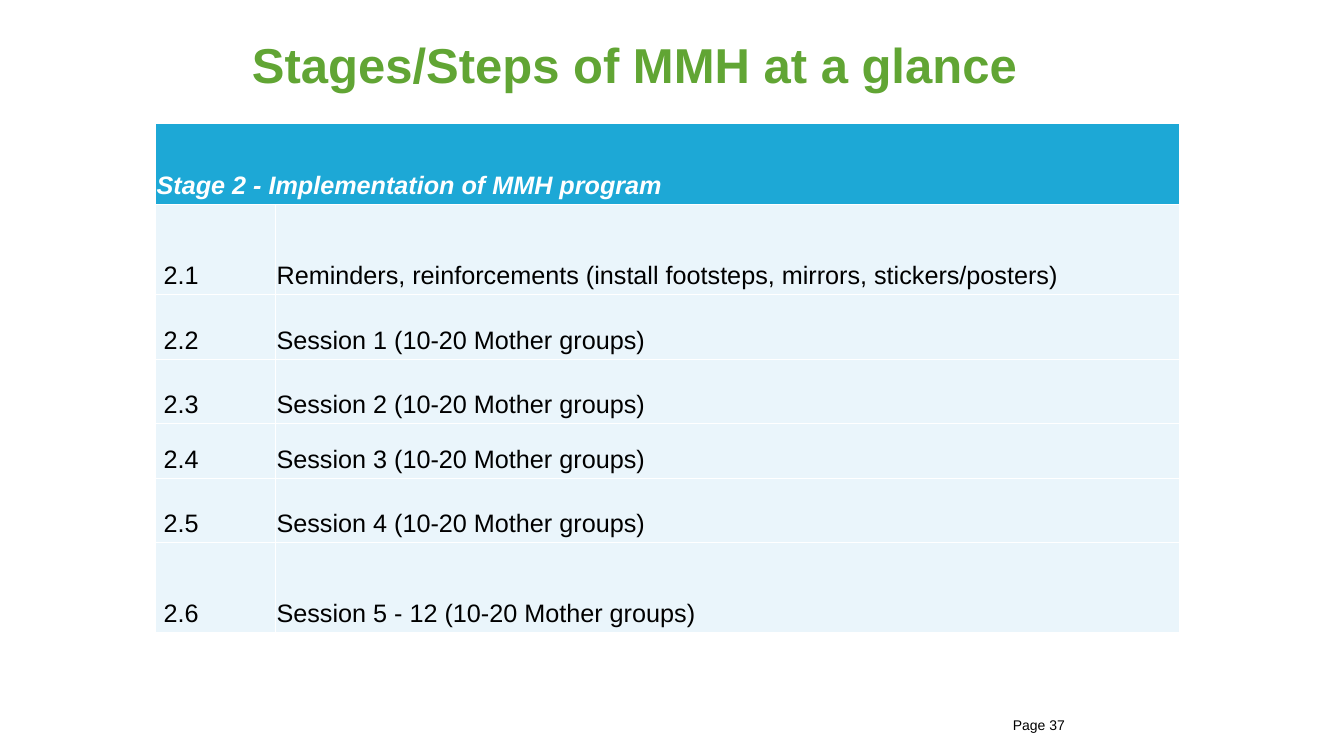
"""Build the slide that lists the steps of stage 2 of the MMH program."""
from lxml.etree import SubElement
from pptx import Presentation
from pptx.dml.color import RGBColor
from pptx.enum.text import MSO_ANCHOR, MSO_AUTO_SIZE, PP_ALIGN
from pptx.oxml.ns import qn
from pptx.util import Pt

COLORS = {"title": "61A534", "head": "1DA8D6", "row": "EAF5FB",
          "line": "FFFFFF", "light": "FFFFFF", "dark": "000000"}
STEPS = ["Reminders, reinforcements (install footsteps, mirrors, stickers/posters)"]
STEPS += [f"Session {name} (10-20 Mother groups)"
          for name in ("1", "2", "3", "4", "5 - 12")]
WIDTHS = [85.7, 645.8]
HEIGHTS = [58, 64.3, 46.5, 45.7, 39.3, 45.7, 64.3]


def style(frame, size, color, bold=False, slant=False):
    """Format the first paragraph of a text frame."""
    para = frame.paragraphs[0]
    para.alignment = PP_ALIGN.LEFT
    for run in para.runs:
        font = run.font
        font.name, font.size = "Arial", Pt(size)
        font.bold, font.italic = bold, slant
        font.color.rgb = RGBColor.from_string(COLORS[color])


def dress(cell, fill, left):
    """Set the margins, borders and fill of a table cell."""
    cell.vertical_anchor = MSO_ANCHOR.BOTTOM
    cell.margin_left, cell.margin_right = Pt(left), Pt(0.7)
    cell.margin_top, cell.margin_bottom = Pt(0.7), Pt(3.6)
    props = cell._tc.get_or_add_tcPr()
    for side in ("lnL", "lnR", "lnT", "lnB"):
        line = SubElement(props, qn(f"a:{side}"), w=str(Pt(1)))
        solid = SubElement(line, qn("a:solidFill"))
        SubElement(solid, qn("a:srgbClr"), val=COLORS["line"])
    cell.fill.solid()
    cell.fill.fore_color.rgb = RGBColor.from_string(COLORS[fill])


deck = Presentation()
deck.slide_width, deck.slide_height = Pt(960), Pt(540)
slide = deck.slides.add_slide(deck.slide_layouts[5])

title = slide.shapes.title
title.left, title.top, title.width, title.height = Pt(172.8), Pt(17.3), Pt(607.7), Pt(56.9)
title.text_frame.text = "Stages/Steps of MMH at a glance"
title.text_frame.vertical_anchor = MSO_ANCHOR.MIDDLE
title.text_frame.auto_size = MSO_AUTO_SIZE.NONE
style(title.text_frame, 35, "title", bold=True)

table = slide.shapes.add_table(len(HEIGHTS), len(WIDTHS), Pt(111.2), Pt(88.2),
                               Pt(sum(WIDTHS)), Pt(sum(HEIGHTS))).table
table.horz_banding = False
for col, width in zip(table.columns, WIDTHS):
    col.width = Pt(width)
for row, height in zip(table.rows, HEIGHTS):
    row.height = Pt(height)

head = table.cell(0, 0)
head.merge(table.cell(0, 1))
head.text_frame.text = "Stage 2 - Implementation of MMH program"
for cell in table.rows[0].cells:
    dress(cell, "head", 0.7)
style(head.text_frame, 18, "light", bold=True, slant=True)

for index, step in enumerate(STEPS, 1):
    for col, (text, left) in enumerate([(f"2.{index}", 5.7), (step, 0.7)]):
        cell = table.cell(index, col)
        cell.text_frame.text = text
        dress(cell, "row", left)
        style(cell.text_frame, 18, "dark")

page = slide.shapes.add_textbox(Pt(716.4), Pt(508.3), Pt(128.9), Pt(13)).text_frame
page.word_wrap = True
page.text = "Page 37"
style(page, 10, "dark")

deck.save("out.pptx")
